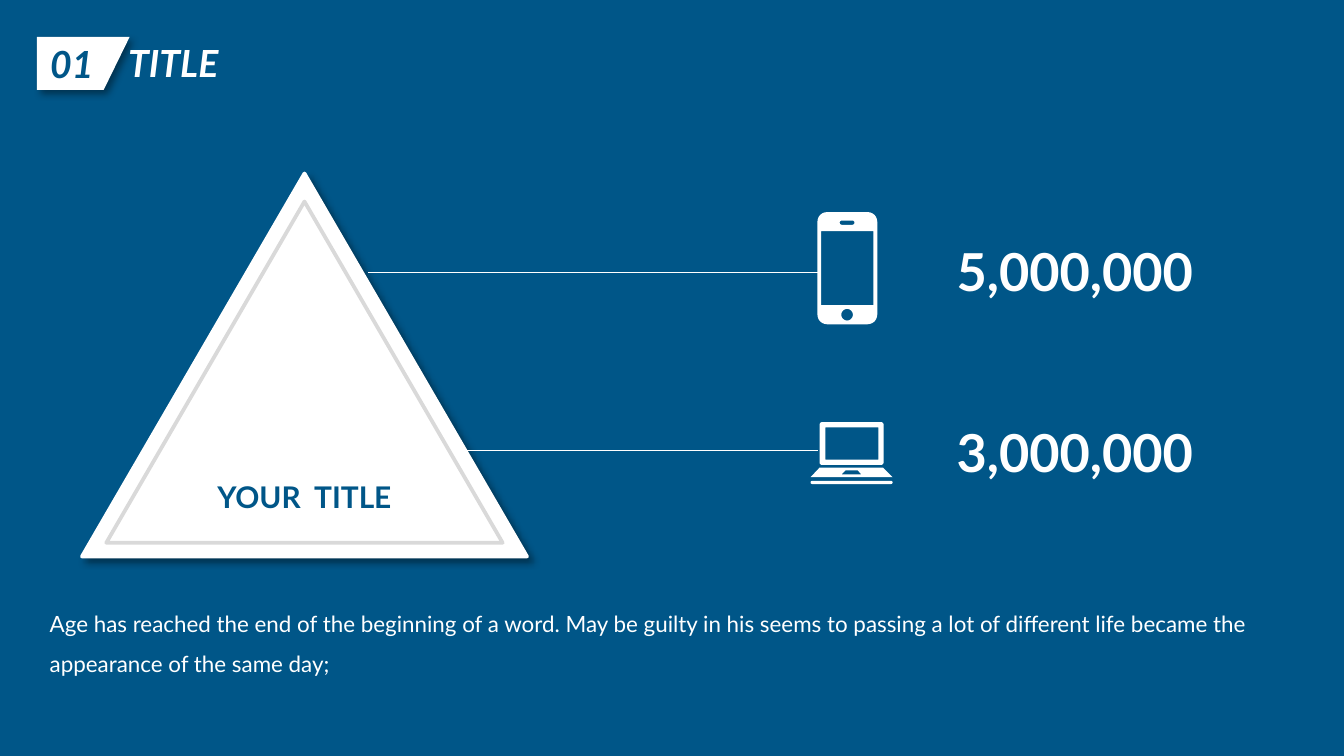
import math

import pptx
import pptx.dml.color
import pptx.enum.shapes
import pptx.enum.text
import pptx.oxml.ns
import pptx.util
from lxml import etree

Cm = pptx.util.Cm
Pt = pptx.util.Pt
SHAPES = pptx.enum.shapes.MSO_SHAPE
ALIGN = pptx.enum.text.PP_ALIGN
ANCHOR = pptx.enum.text.MSO_ANCHOR

BLUE, WHITE, GREY = "005688", "FFFFFF", "D9D9D9"


def colour(value):
    return pptx.dml.color.RGBColor.from_string(value)


def rounded(left, top, width, height, radius, steps=6):
    """Return the points of a rectangle with round corners, in cm."""
    right, bottom = left + width - radius, top + height - radius
    centres = [(right, bottom), (left + radius, bottom),
               (left + radius, top + radius), (right, top + radius)]
    points = []
    for quarter, (x, y) in enumerate(centres):
        for step in range(steps + 1):
            angle = math.pi / 2 * (quarter + step / steps)
            points.append((x + radius * math.cos(angle), y + radius * math.sin(angle)))
    return points


def rectangle(left, top, width, height):
    return [(left, top), (left + width, top),
            (left + width, top + height), (left, top + height)]


class Painter:
    font = "Lato"

    def __init__(self, slide):
        self.slide = slide
        fill = slide.background.fill
        fill.solid()
        fill.fore_color.rgb = colour(BLUE)

    def label(self, shape, text, align=ALIGN.LEFT, spacing=None, ink=WHITE, **style):
        shape.text_frame.word_wrap = True
        para = shape.text_frame.paragraphs[0]
        para.alignment = align
        para.line_spacing = spacing
        span = para.add_run()
        span.text = text
        span.font.color.rgb = colour(ink)
        for name, value in {"name": self.font, **style}.items():
            setattr(span.font, name, value)

    def text(self, place, text, **style):
        box = self.slide.shapes.add_textbox(*map(Cm, place))
        self.label(box, text, **style)

    def finish(self, shape, fill=None, line=None, shadow=False):
        shape.shadow.inherit = False
        if fill:
            shape.fill.solid()
            shape.fill.fore_color.rgb = colour(fill)
        else:
            shape.fill.background()
        if line:
            shape.line.color.rgb = colour(line)
            shape.line.width = Pt(2)
        else:
            shape.line.fill.background()
        if shadow:
            self.add_shadow(shape)
        return shape

    def add_shadow(self, shape):
        qn = pptx.oxml.ns.qn
        effects = shape.element.spPr.find(qn("a:effectLst"))
        outer = etree.SubElement(effects, qn("a:outerShdw"), blurRad=str(Pt(4)),
                                 dist=str(Pt(3)), dir="2700000", algn="tl",
                                 rotWithShape="0")
        black = etree.SubElement(outer, qn("a:srgbClr"), val="000000")
        etree.SubElement(black, qn("a:alpha"), val="40000")

    def triangle(self, place, **look):
        shape = self.slide.shapes.add_shape(SHAPES.ISOSCELES_TRIANGLE, *map(Cm, place))
        return self.finish(shape, **look)

    def outline(self, *contours, **look):
        """Draw one white shape; contours after the first are holes."""
        builder = None
        for contour in contours:
            start, *rest = [(Cm(x), Cm(y)) for x, y in contour]
            if builder is None:
                builder = self.slide.shapes.build_freeform(*start)
            else:
                builder.move_to(*start)
            builder.add_line_segments(rest, close=True)
        return self.finish(builder.convert_to_shape(), fill=WHITE, **look)

    def level_line(self, left, right, y):
        line = self.slide.shapes.add_connector(
            pptx.enum.shapes.MSO_CONNECTOR.STRAIGHT, Cm(left), Cm(y), Cm(right), Cm(y))
        line.line.color.rgb = colour(WHITE)
        line.line.width = Pt(0.75)
        etree.SubElement(line.element.spPr, pptx.oxml.ns.qn("a:effectLst"))


def draw_heading(painter):
    style = {"size": Pt(20), "bold": True, "italic": True}
    badge = painter.outline([(0.7, 0.7), (2.45, 0.7), (1.96, 1.7), (0.7, 1.7)], shadow=True)
    badge.text_frame.vertical_anchor = ANCHOR.MIDDLE
    painter.label(badge, "01", ink=BLUE, **style)
    painter.text((2.08, 0.63, 2.39, 1.12), "TITLE", align=ALIGN.CENTER, **style)


def draw_pyramid(painter):
    pyramid = painter.triangle((1.55, 3.28, 8.41, 7.24), fill=WHITE, line=WHITE, shadow=True)
    pyramid.text_frame.vertical_anchor = ANCHOR.BOTTOM
    pyramid.text_frame.margin_bottom = Cm(0.8)
    painter.label(pyramid, "YOUR  TITLE", align=ALIGN.CENTER, ink=BLUE,
                  size=Pt(16), bold=True)
    painter.triangle((2.01, 3.81, 7.49, 6.45), line=GREY)


def draw_phone(painter):
    body = rounded(15.45, 4.01, 1.13, 2.12, 0.18)
    speaker = rounded(15.87, 4.17, 0.28, 0.08, 0.04)
    button = rounded(15.9, 5.84, 0.22, 0.22, 0.11)
    screen = rectangle(15.52, 4.37, 0.99, 1.4)
    painter.outline(body, speaker, button, screen)


def draw_laptop(painter):
    painter.outline(rounded(15.49, 7.98, 1.21, 0.81, 0.05),
                    rectangle(15.6, 8.08, 1, 0.61))
    keyboard = [(15.49, 8.84), (16.69, 8.84), (16.87, 9.02), (15.32, 9.02)]
    touchpad = [(15.98, 8.89), (16.21, 8.89), (16.28, 8.97), (15.9, 8.97)]
    painter.outline(keyboard, touchpad)
    painter.outline(rounded(15.32, 9.09, 1.55, 0.06, 0.03))


def main():
    deck = pptx.Presentation()
    deck.slide_width, deck.slide_height = Cm(25.4), Cm(14.29)
    painter = Painter(deck.slides.add_slide(deck.slide_layouts[6]))

    draw_heading(painter)
    draw_pyramid(painter)
    for left, y, top, figure in [(6.96, 5.15, 4.39, "5,000,000"),
                                 (8.59, 8.51, 7.82, "3,000,000")]:
        painter.level_line(left, 15.45, y)
        painter.text((17.83, top, 6.88, 1.45), figure, size=Pt(28), bold=True)
    draw_phone(painter)
    draw_laptop(painter)
    painter.text((0.69, 11.15, 24, 1.8),
                 "Age has reached the end of the beginning of a word. May be guilty in his "
                 "seems to passing a lot of different life became the appearance of the "
                 "same day;", spacing=1.5, size=Pt(12))
    deck.save("out.pptx")


if __name__ == "__main__":
    main()
